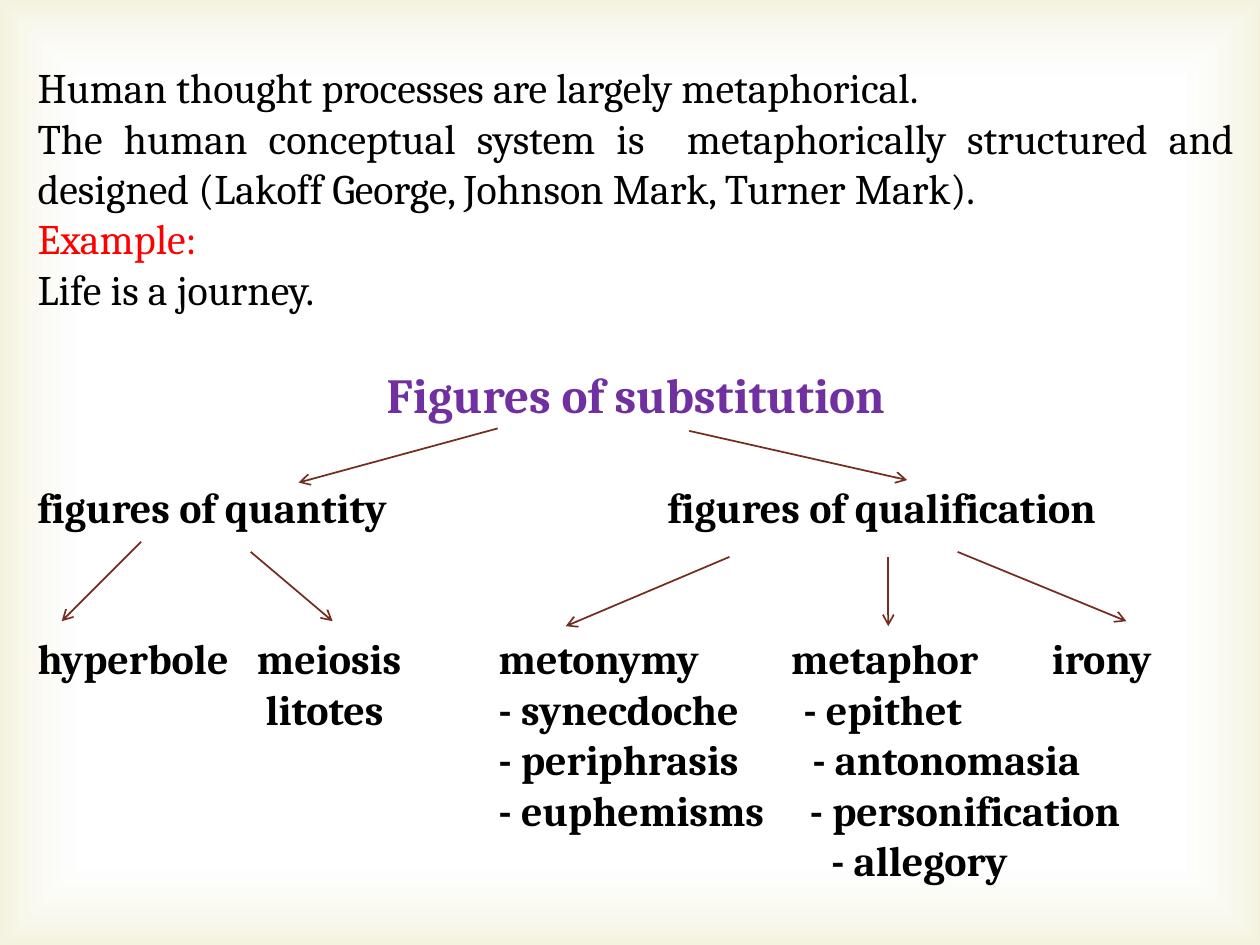
from lxml import etree
from pptx import Presentation
from pptx.dml.color import RGBColor
from pptx.enum.shapes import MSO_CONNECTOR, MSO_SHAPE
from pptx.enum.text import MSO_AUTO_SIZE, PP_ALIGN
from pptx.oxml import parse_xml
from pptx.oxml.ns import nsdecls, qn
from pptx.util import Inches, Pt

STRAIGHT = MSO_CONNECTOR.STRAIGHT
RECTANGLE = MSO_SHAPE.RECTANGLE
GROW = MSO_AUTO_SIZE.SHAPE_TO_FIT_TEXT
JUSTIFY = PP_ALIGN.JUSTIFY
CENTER = PP_ALIGN.CENTER

BLACK = RGBColor(0x00, 0x00, 0x00)
RED = RGBColor(0xFF, 0x00, 0x00)
PURPLE = RGBColor(0x70, 0x30, 0xA0)
BROWN = RGBColor(0x74, 0x2E, 0x1F)
WHITE = RGBColor(0xFF, 0xFF, 0xFF)
OLIVE = RGBColor(0xD1, 0xCA, 0x75)

prs = Presentation()
prs.slide_width = Inches(10)
prs.slide_height = Inches(7.5)
slide = prs.slides.add_slide(prs.slide_layouts[6])

vignette = slide.shapes.add_shape(RECTANGLE, 0, 0, prs.slide_width, prs.slide_height)
vignette.shadow.inherit = False
vignette.line.fill.background()
vignette.fill.background()
stops = "".join(
    f'<a:gs pos="{position * 1000}"><a:srgbClr val="{color}">'
    f'<a:alpha val="{alpha * 1000}"/></a:srgbClr></a:gs>'
    for position, color, alpha in [(83, WHITE, 11), (100, OLIVE, 23)]
)
gradient = parse_xml(
    f'<a:gradFill {nsdecls("a")} rotWithShape="1"><a:gsLst>{stops}</a:gsLst>'
    '<a:path path="rect"><a:fillToRect l="50000" t="50000" r="50000" b="50000"/>'
    "</a:path></a:gradFill>"
)
vignette_properties = vignette.fill._xPr
vignette_properties.replace(vignette_properties.find(qn("a:noFill")), gradient)

lecture = slide.shapes.add_textbox(Inches(0.2), Inches(0.44), Inches(9.69), Inches(6.7)).text_frame
lecture.word_wrap = True
lecture.auto_size = GROW


def add_line(text, size=24, color=BLACK, bold=False, align=JUSTIFY, before=0, tabs=()):
    first = not lecture.paragraphs[0].runs
    paragraph = lecture.paragraphs[0] if first else lecture.add_paragraph()
    paragraph.alignment = align
    paragraph.space_before = Pt(before)
    if tabs:
        tab_list = etree.SubElement(paragraph._p.get_or_add_pPr(), qn("a:tabLst"))
        for tab in tabs:
            etree.SubElement(tab_list, qn("a:tab"), pos=str(Inches(tab)), algn="l")
    run = paragraph.add_run()
    run.text = text
    run.font.name = "Cambria"
    run.font.size = Pt(size)
    run.font.bold = bold
    run.font.color.rgb = color


add_line("Human thought processes are largely metaphorical.")
add_line(
    "The human conceptual system is  metaphorically structured and designed "
    "(Lakoff George, Johnson Mark, Turner Mark)."
)
add_line("Example:", color=RED)
add_line("Life is a journey.")
add_line("Figures of substitution", size=28, color=PURPLE, bold=True, align=CENTER, before=28.8)

figure_rows = [
    ("figures of quantity\tfigures of qualification", 33.6, [5]),
    ("hyperbole\tmeiosis\tmetonymy\tmetaphor\tirony", 57.6, [1.74, 3.66, 5.98, 8.05]),
    ("\tlitotes\t- synecdoche\t- epithet", 0, [1.81, 3.66, 6.08]),
    ("\t- periphrasis\t- antonomasia", 0, [3.66, 6.15]),
    ("\t- euphemisms\t- personification", 0, [3.66, 6.13]),
    ("\t- allegory", 0, [6.3]),
]
for text, before, tabs in figure_rows:
    add_line(text, bold=True, before=before, tabs=tabs)

branches = [
    (3.95, 3.4, 2.37, 3.83),
    (5.47, 3.42, 7.2, 3.81),
    (1.12, 4.3, 0.49, 4.93),
    (1.99, 4.38, 2.64, 4.93),
    (5.79, 4.42, 4.49, 4.97),
    (7.05, 4.42, 7.05, 4.97),
    (7.6, 4.38, 8.94, 4.93),
]
for branch in branches:
    arrow = slide.shapes.add_connector(STRAIGHT, *[Inches(value) for value in branch])
    arrow.line.color.rgb = BROWN
    arrow.line.width = Pt(1)
    etree.SubElement(arrow.line._get_or_add_ln(), qn("a:tailEnd"), type="arrow")
    etree.SubElement(arrow._element.spPr, qn("a:effectLst"))

prs.save("out.pptx")
